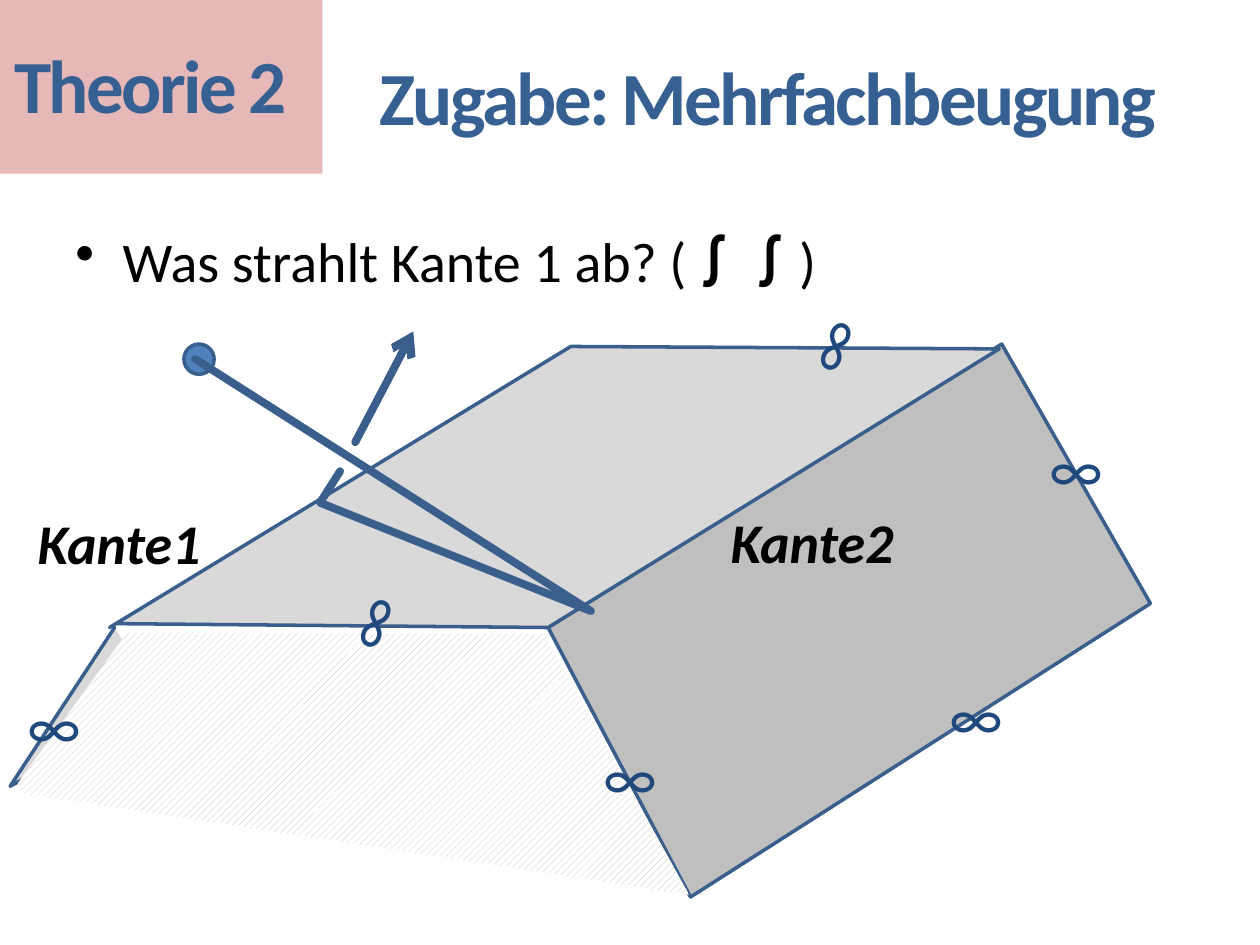
import pptx
import pptx.dml.color
import pptx.enum.dml
import pptx.enum.shapes
import pptx.enum.text
import pptx.oxml.ns
import pptx.util
from lxml import etree

Pt = pptx.util.Pt
qn = pptx.oxml.ns.qn
SHAPES = pptx.enum.shapes.MSO_SHAPE
TEXT = pptx.enum.text
FONT = "Calibri"
SYMBOL_FONT = "Noto Sans CJK KR"
COLORS = {
    "edge": "3A5F8C", "source": "4F81BD", "heading": "376092",
    "badge": "E6B9B8", "top": "D9D9D9", "side": "BFBFBF",
    "infinity": "1F497D", "text": "000000", "white": "FFFFFF",
}


def rgb(name):
    return pptx.dml.color.RGBColor.from_string(COLORS[name])


def paint(shape, fill=None, line=None, width=2):
    """Set fill and outline; None leaves the part empty."""
    shape.shadow.inherit = False
    if fill:
        shape.fill.solid()
        shape.fill.fore_color.rgb = rgb(fill)
    else:
        shape.fill.background()
    if line:
        stroke(shape, line, width)
    else:
        shape.line.fill.background()


def stroke(shape, color, width):
    shape.line.color.rgb = rgb(color)
    shape.line.width = Pt(width)
    shape.line._get_or_add_ln().set("cap", "rnd")


def add_text(page, box, text, size, color, bold=False, italic=False, wrap=False):
    label = page.shapes.add_textbox(*(Pt(value) for value in box))
    frame = label.text_frame
    frame.word_wrap = wrap
    if not wrap:
        frame.auto_size = TEXT.MSO_AUTO_SIZE.SHAPE_TO_FIT_TEXT
    para = frame.paragraphs[0]
    para.text = text
    font = para.font
    font.name, font.size = FONT, Pt(size)
    font.bold, font.italic = bold, italic
    font.color.rgb = rgb(color)
    return label


def add_outline(page, origin, points, closed=False):
    left, top = origin
    corners = [(Pt(left + x), Pt(top + y)) for x, y in points]
    builder = page.shapes.build_freeform(*corners[0])
    builder.add_line_segments(corners[1:], close=closed)
    return builder.convert_to_shape()


def add_heading(page, box, text):
    label = add_text(page, box, text, 42.9, "heading", bold=True, wrap=True)
    label.text_frame.vertical_anchor = TEXT.MSO_ANCHOR.MIDDLE
    para = label.text_frame.paragraphs[0]
    para.alignment = TEXT.PP_ALIGN.CENTER
    para.runs[0]._r.get_or_add_rPr().set("spc", "-150")


def add_badge(page, box):
    left, top, width, height = box
    badge = page.shapes.add_shape(SHAPES.RECTANGLE, *(Pt(value) for value in box))
    paint(badge, "badge")
    add_heading(page, (left - 5, top + 5.8, width, height - 12.2), "Theorie 2")


def add_question(page, box):
    label = add_text(page, box, "Was strahlt Kante 1 ab? (", 32, "text", wrap=True)
    para = label.text_frame.paragraphs[0]
    para.space_before = Pt(6.4)
    # Bullet with hanging indent
    properties = para._p.get_or_add_pPr()
    properties.set("marL", str(Pt(27)))
    properties.set("indent", str(-Pt(27)))
    bullet = etree.Element(qn("a:buChar"), char="•")
    properties.find(qn("a:defRPr")).addprevious(bullet)
    # Double integral in its own font
    span = para.add_run()
    span.text = "∫∫"
    span.font.name, span.font.bold = SYMBOL_FONT, True
    etree.SubElement(span._r.get_or_add_rPr(), qn("a:ea"), typeface=SYMBOL_FONT)
    para.add_run().text = ")"


def add_roof(page, origin):
    left_face = [(65.5, 178.6), (5.8, 269.3), (92.2, 221.8)]
    right_face = [(313.2, 178.6), (572.4, 16.6), (657.4, 164.9), (394.6, 332.6)]
    top_face = [(67, 176.4), (313.2, 178.6), (571, 19.4), (326.2, 18), (62.6, 178.6)]
    front_face = [(10.1, 267.8), (72.7, 181.4), (311, 182.2), (393.8, 331.2), (13.7, 273.6)]
    for points, fill, closed in (
        (left_face, "top", False), (right_face, "side", True), (top_face, "top", False),
    ):
        paint(add_outline(page, origin, points, closed), fill, "edge")
    # Hatched cut through the body
    front = add_outline(page, origin, front_face)
    paint(front)
    front.fill.patterned()
    front.fill.pattern = pptx.enum.dml.MSO_PATTERN.WIDE_UPWARD_DIAGONAL
    front.fill.fore_color.rgb = rgb("side")
    front.fill.back_color.rgb = rgb("white")


def add_rays(page, origin):
    left, top = origin
    source = page.shapes.add_shape(
        SHAPES.OVAL, Pt(left + 105.1), Pt(top + 16.6), Pt(17.3), Pt(17.3))
    paint(source, "source", "edge")
    path = [(111.6, 25.2), (337.7, 169.2), (182.9, 107.3), (194.4, 89.3)]
    paint(add_outline(page, origin, path), None, "edge", 4.5)
    # Outgoing ray
    arrow = page.shapes.add_connector(
        pptx.enum.shapes.MSO_CONNECTOR.STRAIGHT,
        Pt(left + 203), Pt(top + 72.7), Pt(left + 236.2), Pt(top + 9.4))
    stroke(arrow, "edge", 4.5)
    etree.SubElement(arrow.line._get_or_add_ln(), qn("a:tailEnd"), type="arrow")
    etree.SubElement(arrow._element.spPr, qn("a:effectLst"))


def add_labels(page, origin):
    left, top = origin
    for text, x, y in (("Kante1", 14.4, 107.3), ("Kante2", 410.4, 106.6)):
        add_text(page, (left + x, top + y, 108.7, 46.1), text, 32, "text", True, True)
    # Endless edges
    for x, y, angle in (
        (8.6, 208.8, 0), (195.8, 152.6, 111), (337.7, 237.6, 0),
        (592.6, 61.9, 0), (535.7, 203.8, 0), (458.6, -5.8, 111),
    ):
        sign = add_text(page, (left + x, top + y, 45.4, 51.1), "∞", 36, "infinity")
        sign.rotation = angle


def main():
    deck = pptx.Presentation()
    deck.slide_width, deck.slide_height = Pt(720), Pt(540)
    page = deck.slides.add_slide(deck.slide_layouts[6])
    drawing = (0, 180)
    add_roof(page, drawing)
    add_question(page, (36, 126, 648, 356.4))
    add_badge(page, (-2.2, -2.9, 186.5, 102.2))
    add_heading(page, (187.9, 9.4, 501.8, 90), "Zugabe: Mehrfachbeugung")
    add_rays(page, drawing)
    add_labels(page, drawing)
    deck.save("out.pptx")


if __name__ == "__main__":
    main()
